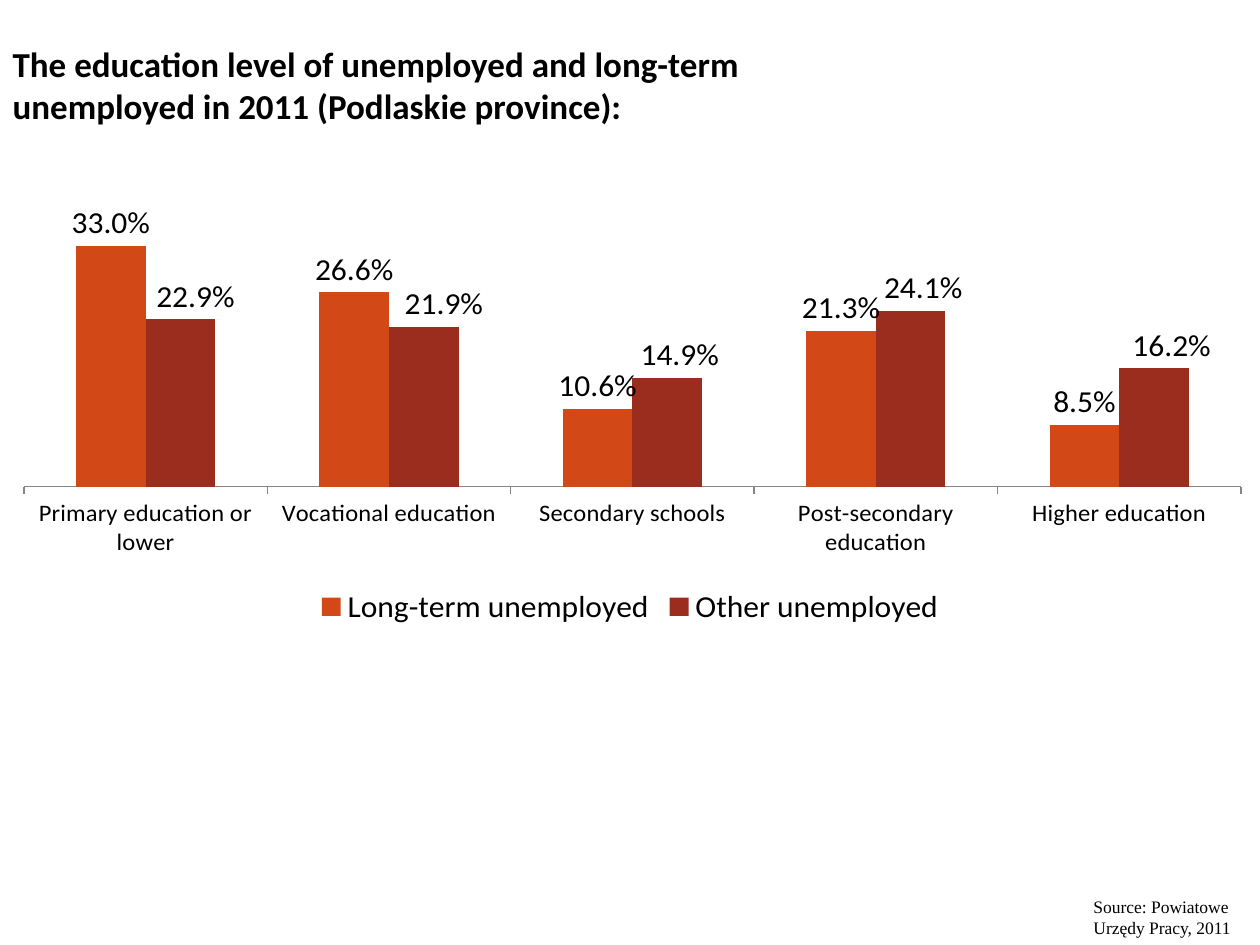
from lxml.etree import SubElement
from pptx import Presentation
from pptx.chart.data import CategoryChartData
from pptx.dml.color import RGBColor
from pptx.enum.chart import (XL_CHART_TYPE as ChartType, XL_LABEL_POSITION as LabelPosition,
                             XL_LEGEND_POSITION as LegendPosition, XL_TICK_MARK as TickMark)
from pptx.enum.text import MSO_ANCHOR as Anchor, PP_ALIGN as Align
from pptx.oxml.ns import qn
from pptx.util import Inches, Pt

BLACK = RGBColor(0x00, 0x00, 0x00)
GRAY = RGBColor(0x86, 0x86, 0x86)
ORANGE = RGBColor(0xD3, 0x48, 0x17)
RED = RGBColor(0x9B, 0x2D, 0x1F)

LEVELS = ["Primary education or lower", "Vocational education", "Secondary schools",
          "Post-secondary education", "Higher education"]
GROUPS = [("Long-term unemployed", ORANGE, [0.33, 0.266, 0.106, 0.213, 0.085]),
          ("Other unemployed", RED, [0.229, 0.219, 0.149, 0.241, 0.162])]
LABEL_SHIFTS = [0.012, 0.016, 0.01, 0.01, 0.014]
PERCENT = "0.0%"


def style_font(font, name, size, bold=False):
    font.name = name
    font.size = Pt(size)
    font.bold = bold
    font.color.rgb = BLACK


def fill_text(box, left, top, width, height, text, font_name, size, bold=False):
    box.left, box.top = Inches(left), Inches(top)
    box.width, box.height = Inches(width), Inches(height)
    frame = box.text_frame
    frame.word_wrap = True
    frame.vertical_anchor = Anchor.TOP
    frame.text = text
    paragraph = frame.paragraphs[0]
    paragraph.alignment = Align.LEFT
    paragraph.line_spacing = 1.0
    style_font(paragraph.runs[0].font, font_name, size, bold)


def add_layout(parent, position, **values):
    layout = SubElement(parent, qn("c:layout"))
    manual = SubElement(layout, qn("c:manualLayout"))
    for tag, value in values.items():
        SubElement(manual, qn(f"c:{tag}")).set("val", str(value))
    parent.insert(position, layout)


def shift_labels(chart, series):
    for point_index in range(len(LEVELS)):
        label = series.points[point_index].data_label
        style_font(label.font, "Calibri", 18)
        label.position = LabelPosition.OUTSIDE_END
    for label_xml, shift in zip(chart.element.iter(qn("c:dLbl")), LABEL_SHIFTS):
        add_layout(label_xml, 1, x=shift, y=0)


def format_series(series, color):
    series.format.fill.solid()
    series.format.fill.fore_color.rgb = color
    series.invert_if_negative = False
    labels = series.data_labels
    labels.show_value = True
    labels.number_format = PERCENT
    labels.number_format_is_linked = False
    labels.position = LabelPosition.OUTSIDE_END
    style_font(labels.font, "Calibri", 18)


def format_axes(chart):
    levels_axis = chart.category_axis
    levels_axis.major_tick_mark = TickMark.OUTSIDE
    levels_axis.format.line.color.rgb = GRAY
    style_font(levels_axis.tick_labels.font, "Calibri", 14)
    share_axis = chart.value_axis
    share_axis.visible = False
    share_axis.has_major_gridlines = False
    share_axis.minimum_scale = 0
    share_axis.tick_labels.number_format = PERCENT
    share_axis.tick_labels.number_format_is_linked = False


def add_education_chart(slide):
    data = CategoryChartData(number_format=PERCENT)
    data.categories = LEVELS
    for name, _, shares in GROUPS:
        data.add_series(name, shares)
    chart = slide.shapes.add_chart(ChartType.COLUMN_CLUSTERED, Inches(0), Inches(1.62),
                                   Inches(10), Inches(3.39), data).chart
    style_font(chart.font, "Calibri", 18)
    chart.has_title = False
    plot = chart.plots[0]
    plot.gap_width = 150
    plot.overlap = 0
    plot.vary_by_categories = False
    for series, (_, color, _) in zip(plot.series, GROUPS):
        format_series(series, color)
    shift_labels(chart, plot.series[1])
    format_axes(chart)
    chart.has_legend = True
    chart.legend.position = LegendPosition.BOTTOM
    chart.legend.include_in_layout = False
    style_font(chart.legend.font, "Calibri", 18)
    plot_area = chart.element.find(f".//{qn('c:plotArea')}")
    for automatic_layout in plot_area.findall(qn("c:layout")):
        plot_area.remove(automatic_layout)
    add_layout(plot_area, 0, layoutTarget="inner", xMode="edge", yMode="edge",
               x=0.019, y=0.03, w=0.966, h=0.62)


def main():
    deck = Presentation()
    deck.slide_width, deck.slide_height = Inches(10), Inches(7.5)
    slide = deck.slides.add_slide(deck.slide_layouts[5])
    fill_text(slide.shapes.title, 0, 0.29, 6.73, 0.77,
              "The education level of unemployed and long-term unemployed in 2011 "
              "(Podlaskie province):", "Calibri", 20, True)
    source = slide.shapes.add_textbox(0, 0, 0, 0)
    fill_text(source, 8.58, 7.06, 1.42, 0.44, "Source: Powiatowe Urzędy Pracy, 2011",
              "Times New Roman", 10)
    add_education_chart(slide)
    deck.save("out.pptx")


if __name__ == "__main__":
    main()
